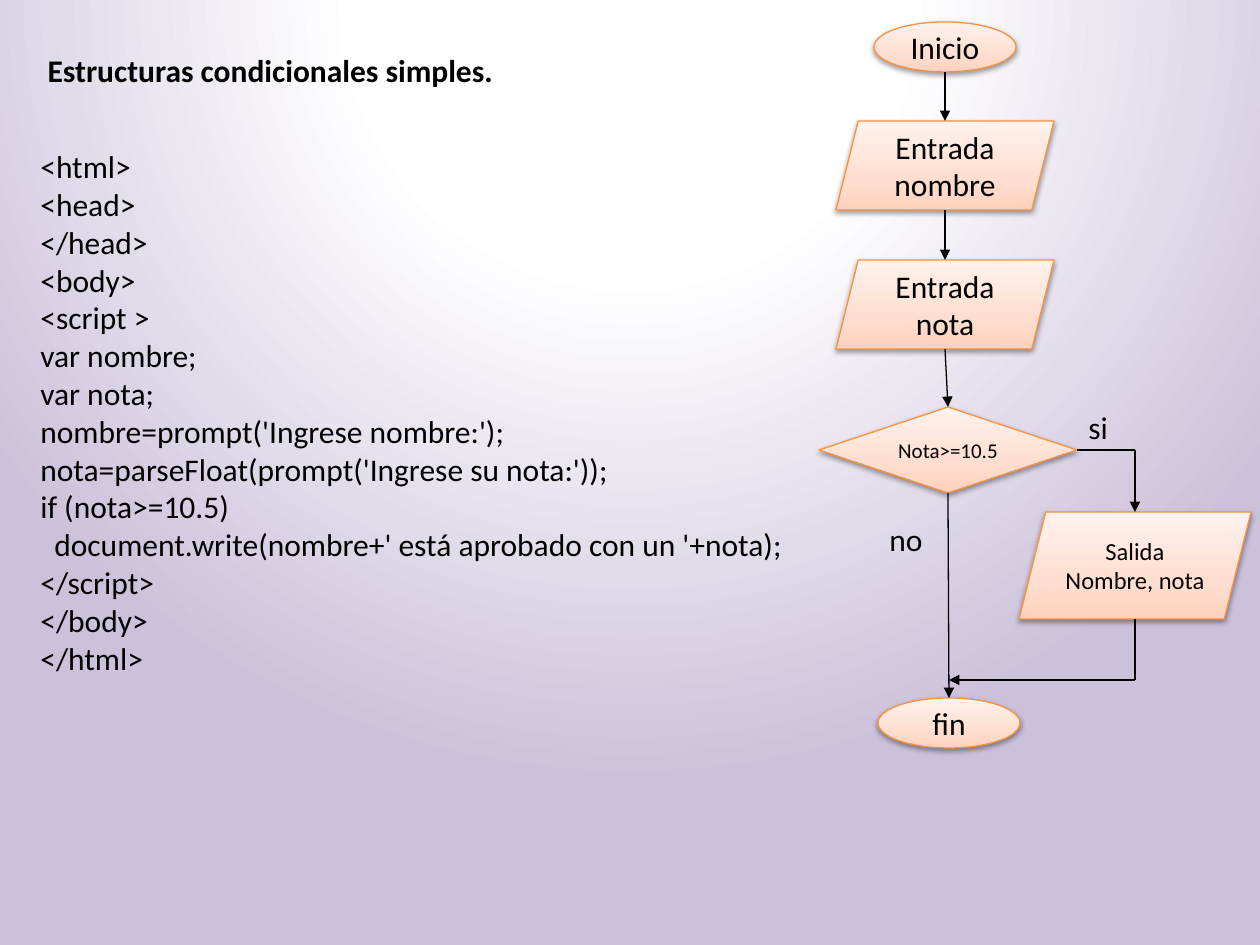
"""Build the slide on simple conditionals: script listing and its flowchart."""
from lxml import etree
from pptx import Presentation
from pptx.dml.color import RGBColor
from pptx.enum.shapes import MSO_CONNECTOR, MSO_SHAPE as Shape
from pptx.enum.text import MSO_ANCHOR as Anchor, MSO_AUTO_SIZE as AutoSize, PP_ALIGN as Align
from pptx.oxml import parse_xml
from pptx.oxml.ns import nsdecls, qn
from pptx.util import Emu, Pt

PX = 914400 / 126
FONT = "Calibri"
BLACK = RGBColor(0x00, 0x00, 0x00)
WHITE = RGBColor(0xFF, 0xFF, 0xFF)
LILAC = RGBColor(0xCC, 0xC1, 0xDA)
ORANGE = RGBColor(0xF6, 0x92, 0x40)
PEACH = RGBColor(0xFF, 0xD2, 0xBD)
PALE_PEACH = RGBColor(0xFF, 0xDE, 0xD0)
CREAM = RGBColor(0xFF, 0xF2, 0xED)

BACKDROP = ([(0, WHITE), (35, WHITE), (100, LILAC)],
            '<a:path path="circle"><a:fillToRect l="50000" t="-80000" r="50000" b="180000"/></a:path>')
STEP_FILL = ([(0, PEACH), (35, PALE_PEACH), (100, CREAM)],
             '<a:lin ang="16200000" scaled="0"/>')

HEADING = "Estructuras condicionales simples."
HEADING_BOX = (35, 45, 474, 51)
CODE_BOX = (28, 141, 784, 547)
CODE_INDENT = 14
CODE = [
    (0, "<html>"),
    (0, "<head>"),
    (0, "</head>"),
    (0, "<body>"),
    (0, "<script >"),
    (0, "var nombre;"),
    (0, "var nota;"),
    (0, "nombre=prompt('Ingrese nombre:');"),
    (0, "nota=parseFloat(prompt('Ingrese su nota:'));"),
    (0, "if (nota>=10.5)"),
    (1, "document.write(nombre+' está aprobado con un '+nota);"),
    (0, "</script>"),
    (0, "</body>"),
    (0, "</html>"),
]
STEPS = {
    "inicio": (Shape.OVAL, (874, 22, 142, 50), ["Inicio"], 18),
    "nombre": (Shape.PARALLELOGRAM, (836, 121, 218, 89), ["Entrada", "nombre"], 18),
    "nota": (Shape.PARALLELOGRAM, (836, 260, 218, 89), ["Entrada", "nota"], 18),
    "salida": (Shape.PARALLELOGRAM, (1019, 512, 232, 107), ["Salida", "Nombre, nota"], 14),
    "fin": (Shape.OVAL, (878, 698, 142, 50), ["fin"], 18),
    "decision": (Shape.DIAMOND, (819, 407, 258, 86), ["Nota>=10.5"], 12),
}
FLOW = [("inicio", "nombre"), ("nombre", "nota"), ("nota", "decision"), ("decision", "fin")]
BRANCH_LABELS = [("si", (1076, 402, 49, 51)), ("no", (877, 514, 64, 51))]
MERGE_Y = 680


def emu(*lengths):
    return [Emu(round(length * PX)) for length in lengths]


def set_gradient(fill, owner, stops, shade):
    fill.gradient()
    gradient = owner.find(".//" + qn("a:gradFill"))
    marks = "".join(f'<a:gs pos="{pos * 1000}"><a:srgbClr val="{color}"/></a:gs>'
                    for pos, color in stops)
    gradient.getparent().replace(gradient, parse_xml(
        f'<a:gradFill {nsdecls("a")} rotWithShape="1"><a:gsLst>{marks}</a:gsLst>{shade}</a:gradFill>'))


def write(frame, lines, size, align=Align.LEFT, bold=False):
    frame.text = "\n".join(lines)
    for paragraph in frame.paragraphs:
        paragraph.alignment = align
        font = paragraph.font
        font.name, font.size, font.bold = FONT, Pt(size), bold
        font.color.rgb = BLACK


def add_text(slide, box, lines):
    frame = slide.shapes.add_textbox(*emu(*box)).text_frame
    frame.word_wrap = True
    write(frame, lines, 18)
    return frame


def add_step(slide, preset, box, lines, size):
    step = slide.shapes.add_shape(preset, *emu(*box))
    set_gradient(step.fill, step.element.spPr, *STEP_FILL)
    step.line.color.rgb = ORANGE
    step.line.width = Pt(0.75)
    step.element.spPr.append(parse_xml(
        f'<a:effectLst {nsdecls("a")}><a:outerShdw blurRad="40000" dist="20000" dir="5400000" '
        'rotWithShape="0"><a:srgbClr val="000000"><a:alpha val="38000"/></a:srgbClr>'
        '</a:outerShdw></a:effectLst>'))
    step.text_frame.vertical_anchor = Anchor.MIDDLE
    write(step.text_frame, lines, size, Align.CENTER)
    return step


def add_line(slide, start, end, arrow=True):
    line = slide.shapes.add_connector(MSO_CONNECTOR.STRAIGHT, *emu(*start, *end))
    line.line.color.rgb = BLACK
    line.line.width = Pt(0.75)
    if arrow:
        etree.SubElement(line.line._get_or_add_ln(), qn("a:tailEnd"), type="triangle")
    etree.SubElement(line._element.spPr, qn("a:effectLst"))
    return line


def side(name, dx, dy):
    left, top, width, height = STEPS[name][1]
    return left + width * dx / 2, top + height * dy / 2


def add_flow(slide):
    steps = {name: add_step(slide, *step) for name, step in STEPS.items()}
    for source, target in FLOW:
        arrow = add_line(slide, side(source, 1, 2), side(target, 1, 0))
        if source == "decision":
            arrow.begin_connect(steps[source], 2)
        if target in ("decision", "fin"):
            arrow.end_connect(steps[target], 0)

    yes = side("decision", 2, 1)
    output_top, output_bottom = side("salida", 1, 0), side("salida", 1, 2)
    turn, drop = (output_top[0], yes[1]), (output_bottom[0], MERGE_Y)
    add_line(slide, yes, turn, arrow=False).begin_connect(steps["decision"], 3)
    add_line(slide, turn, output_top)
    add_line(slide, output_bottom, drop, arrow=False)
    add_line(slide, drop, (side("fin", 1, 0)[0], MERGE_Y))
    for label, box in BRANCH_LABELS:
        add_text(slide, box, [label])


def main():
    deck = Presentation()
    deck.slide_width, deck.slide_height = emu(1260, 945)
    slide = deck.slides.add_slide(deck.slide_layouts[5])
    set_gradient(slide.background.fill, slide.element, *BACKDROP)

    title = slide.shapes.title
    title.left, title.top, title.width, title.height = emu(*HEADING_BOX)
    title.text_frame.word_wrap = False
    title.text_frame.auto_size = AutoSize.NONE
    title.text_frame.vertical_anchor = Anchor.TOP
    write(title.text_frame, [HEADING], 18, bold=True)

    code = add_text(slide, CODE_BOX, [text for _, text in CODE])
    for (level, _), paragraph in zip(CODE, code.paragraphs):
        if level:
            paragraph._p.get_or_add_pPr().set("marL", str(emu(level * CODE_INDENT)[0]))

    add_flow(slide)
    deck.save("out.pptx")


if __name__ == "__main__":
    main()
